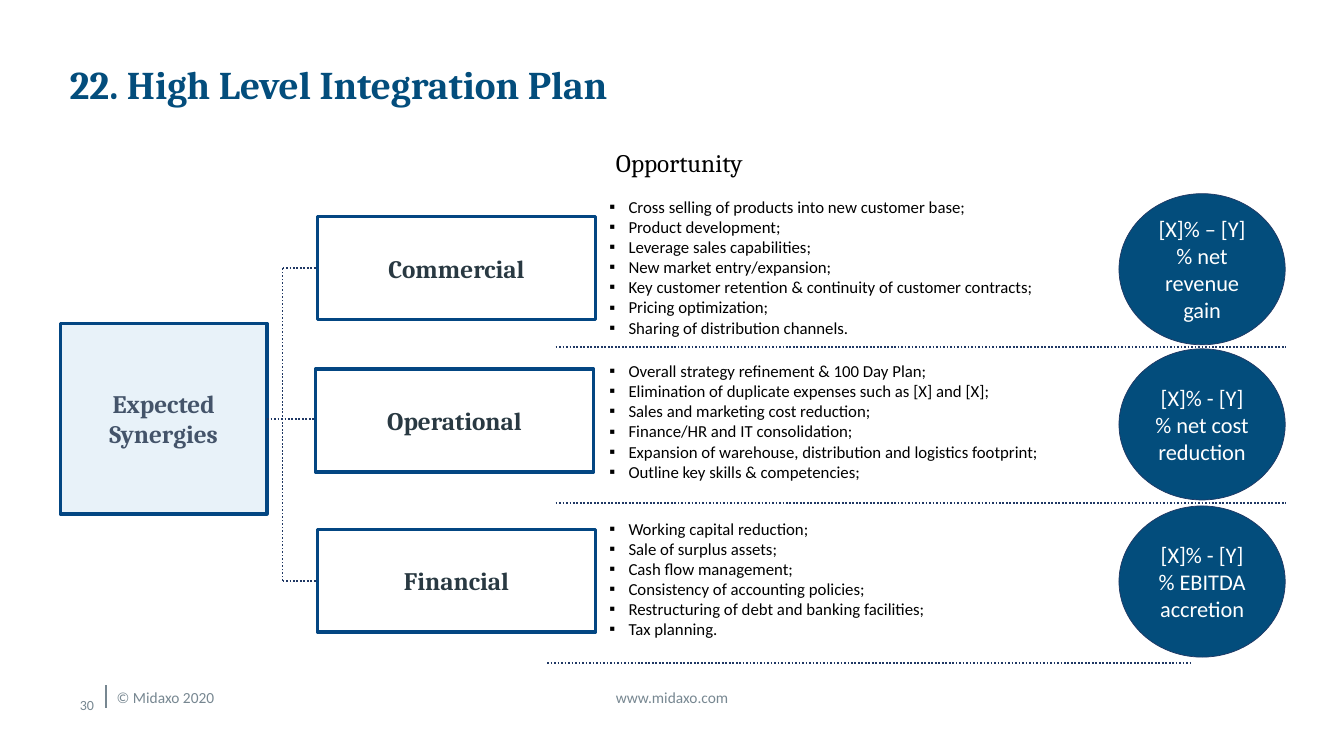
from dataclasses import dataclass

from lxml.etree import SubElement
from pptx import Presentation
from pptx.dml.color import RGBColor
from pptx.enum.dml import MSO_LINE
from pptx.enum.shapes import MSO_CONNECTOR, MSO_SHAPE
from pptx.enum.text import MSO_ANCHOR, MSO_AUTO_SIZE, PP_ALIGN
from pptx.oxml.ns import qn
from pptx.util import Cm, Pt

WHITE = RGBColor(0xFF, 0xFF, 0xFF)
BLACK = RGBColor(0x00, 0x00, 0x00)
TITLE_BLUE = RGBColor(0x03, 0x4D, 0x7C)
FRAME_BLUE = RGBColor(0x03, 0x46, 0x82)
DOT_BLUE = RGBColor(0x20, 0x38, 0x64)
PALE_BLUE = RGBColor(0xE8, 0xF2, 0xF9)
SLATE = RGBColor(0x44, 0x54, 0x6A)
INK = RGBColor(0x29, 0x39, 0x42)
GREY = RGBColor(0x77, 0x87, 0x91)

HEADING, BODY = "Cambria", "Calibri"
LABEL_WIDTH, LABEL_HEIGHT = 7.01, 2.59
CIRCLE_WIDTH, CIRCLE_HEIGHT = 4.19, 3.81


@dataclass
class Synergy:
    """One band; the drops are measured down from its top."""
    name: str
    gain: str
    opportunities: list
    top: float
    label_left: float
    label_drop: float
    list_drop: float
    divider_left: float
    divider_right: float
    divider_drop: float

    @property
    def label_middle(self):
        return self.top + self.label_drop + LABEL_HEIGHT / 2


SYNERGIES = [
    Synergy("Commercial", "[X]% – [Y]% net revenue gain",
            ["Cross selling of products into new customer base;",
             "Product development;",
             "Leverage sales capabilities;",
             "New market entry/expansion;",
             "Key customer retention & continuity of customer contracts;",
             "Pricing optimization;",
             "Sharing of distribution channels."],
            4.88, 8, 0.58, 0.07, 14, 32.41, 3.86),
    Synergy("Operational", "[X]% - [Y]% net cost reduction",
            ["Overall strategy refinement & 100 Day Plan;",
             "Elimination of duplicate expenses such as [X] and [X];",
             "Sales and marketing cost reduction;",
             "Finance/HR and IT consolidation;",
             "Expansion of warehouse, distribution and logistics footprint;",
             "Outline key skills & competencies;"],
            8.79, 7.95, 0.51, 0.3, 14, 32.41, 3.88),
    Synergy("Financial", "[X]% - [Y]% EBITDA accretion",
            ["Working capital reduction;",
             "Sale of surplus assets;",
             "Cash flow management;",
             "Consistency of accounting policies;",
             "Restructuring of debt and banking facilities;",
             "Tax planning."],
            12.75, 8, 0.59, 0.31, 13.79, 30.02, 3.96),
]


def style_text(frame, size, font, color, align, bold=False, anchor=MSO_ANCHOR.MIDDLE):
    frame.word_wrap = True
    frame.vertical_anchor = anchor
    for paragraph in frame.paragraphs:
        paragraph.alignment = align
        for run in paragraph.runs:
            run.font.size = Pt(size)
            run.font.name = font
            run.font.bold = bold
            run.font.color.rgb = color


def add_text(slide, text, left, top, width, height, size, font, color, align, **style):
    box = slide.shapes.add_textbox(Cm(left), Cm(top), Cm(width), Cm(height))
    box.text_frame.text = text
    style_text(box.text_frame, size, font, color, align, **style)
    return box.text_frame


def add_figure(slide, kind, text, left, top, width, height, fill, outline, outline_width):
    """Add a preset shape holding unstyled text and return its text frame."""
    figure = slide.shapes.add_shape(kind, Cm(left), Cm(top), Cm(width), Cm(height))
    figure.shadow.inherit = False
    if fill is None:
        figure.fill.background()
    else:
        figure.fill.solid()
        figure.fill.fore_color.rgb = fill
    figure.line.color.rgb = outline
    figure.line.width = Pt(outline_width)
    figure.text_frame.text = text
    return figure.text_frame


def add_line(slide, x1, y1, x2, y2, color=DOT_BLUE, width=1.25, dash=MSO_LINE.ROUND_DOT):
    line = slide.shapes.add_connector(MSO_CONNECTOR.STRAIGHT, Cm(x1), Cm(y1), Cm(x2), Cm(y2))
    line.line.color.rgb = color
    line.line.width = Pt(width)
    line.line.dash_style = dash
    SubElement(line._element.spPr, qn("a:effectLst"))


def add_framed_label(slide, text, left, top, width, height, fill, color):
    frame = add_figure(slide, MSO_SHAPE.RECTANGLE, text, left, top, width, height,
                       fill, FRAME_BLUE, 2.5)
    style_text(frame, 18, HEADING, color, PP_ALIGN.CENTER, bold=True)


def add_title(slide, left, top, width, height):
    title = slide.shapes.title
    title.left, title.top, title.width, title.height = map(Cm, (left, top, width, height))
    title.text_frame.text = "22. High Level Integration Plan"
    title.text_frame.auto_size = MSO_AUTO_SIZE.NONE
    style_text(title.text_frame, 28, HEADING, TITLE_BLUE, PP_ALIGN.LEFT, bold=True)


def add_opportunities(slide, opportunities, left, top, width):
    frame = add_text(slide, "\n".join(opportunities), left, top, width,
                     0.13 + 0.52 * len(opportunities), 12, BODY, BLACK,
                     PP_ALIGN.LEFT, anchor=MSO_ANCHOR.TOP)
    frame.margin_top = 0
    for paragraph in frame.paragraphs:
        properties = paragraph._p.get_or_add_pPr()
        properties.set("marL", str(Cm(0.48)))
        properties.set("indent", str(-Cm(0.48)))
        SubElement(properties, qn("a:buFont"), typeface="Arial")
        SubElement(properties, qn("a:buChar"), char="▪")


def add_synergy(slide, synergy):
    top = synergy.top
    add_framed_label(slide, synergy.name, synergy.label_left, top + synergy.label_drop,
                     LABEL_WIDTH, LABEL_HEIGHT, None, INK)
    add_opportunities(slide, synergy.opportunities, 15.11, top + synergy.list_drop, 11.99)
    gain = add_figure(slide, MSO_SHAPE.OVAL, synergy.gain, 28.2, top,
                      CIRCLE_WIDTH, CIRCLE_HEIGHT, TITLE_BLUE, DOT_BLUE, 0.5)
    style_text(gain, 16, BODY, WHITE, PP_ALIGN.CENTER)
    divider = top + synergy.divider_drop
    add_line(slide, synergy.divider_left, divider, synergy.divider_right, divider)


def add_root(slide, left, top, width, height, synergies):
    """Add the root box and the dotted tree that joins it to the labels."""
    add_framed_label(slide, "Expected Synergies", left, top, width, height, PALE_BLUE, SLATE)
    first, middle, last = synergies
    right, spine = left + width, left + width + 0.39
    centre = top + height / 2
    add_line(slide, right, centre, middle.label_left, centre)
    add_line(slide, spine, last.label_middle, spine, first.label_middle)
    for branch in (first, last):
        add_line(slide, spine, branch.label_middle, branch.label_left, branch.label_middle)


def add_footer(slide, left, top):
    rule = left + 1.17
    add_line(slide, rule, top + 0.63, rule, top + 0.05, GREY, 1, MSO_LINE.SOLID)
    add_text(slide, "30", left, top + 0.05, 1.12, 1.02, 10, BODY, GREY, PP_ALIGN.RIGHT)
    add_text(slide, "© Midaxo 2020", rule + 0.02, top, 5.64, 0.74, 11, BODY, GREY, PP_ALIGN.LEFT)
    add_text(slide, "www.midaxo.com", left + 11.4, top, 8.08, 0.74, 11, BODY, GREY,
             PP_ALIGN.CENTER)


def main():
    deck = Presentation()
    deck.slide_width, deck.slide_height = Cm(33.87), Cm(19.05)
    slide = deck.slides.add_slide(deck.slide_layouts[5])
    add_title(slide, 1.5, 1.04, 30.91, 2.16)
    add_text(slide, "Opportunity", 8, 3.58, 18.24, 1.02, 18, HEADING, BLACK,
             PP_ALIGN.CENTER, anchor=MSO_ANCHOR.TOP)
    for synergy in SYNERGIES:
        add_synergy(slide, synergy)
    add_root(slide, 1.52, 8.15, 5.21, 4.8, SYNERGIES)
    add_footer(slide, 1.5, 17.2)
    deck.save("out.pptx")


if __name__ == "__main__":
    main()
